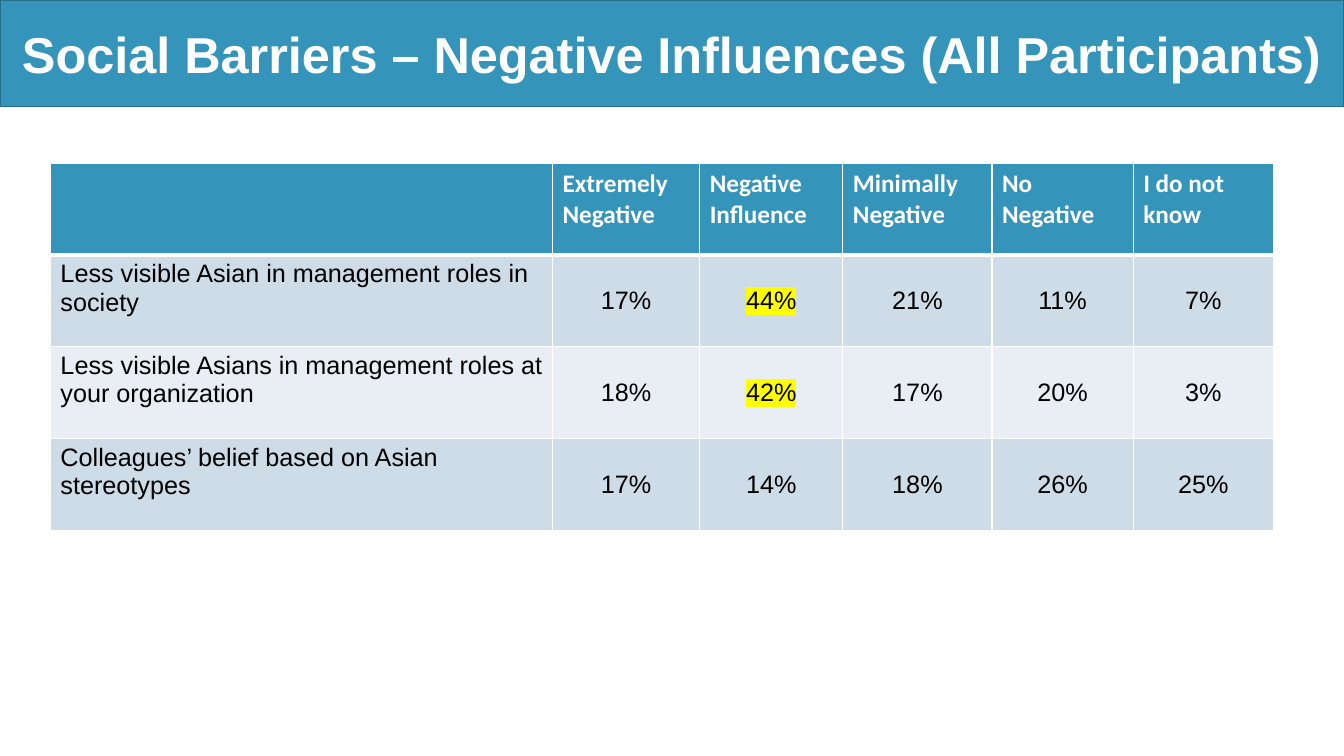
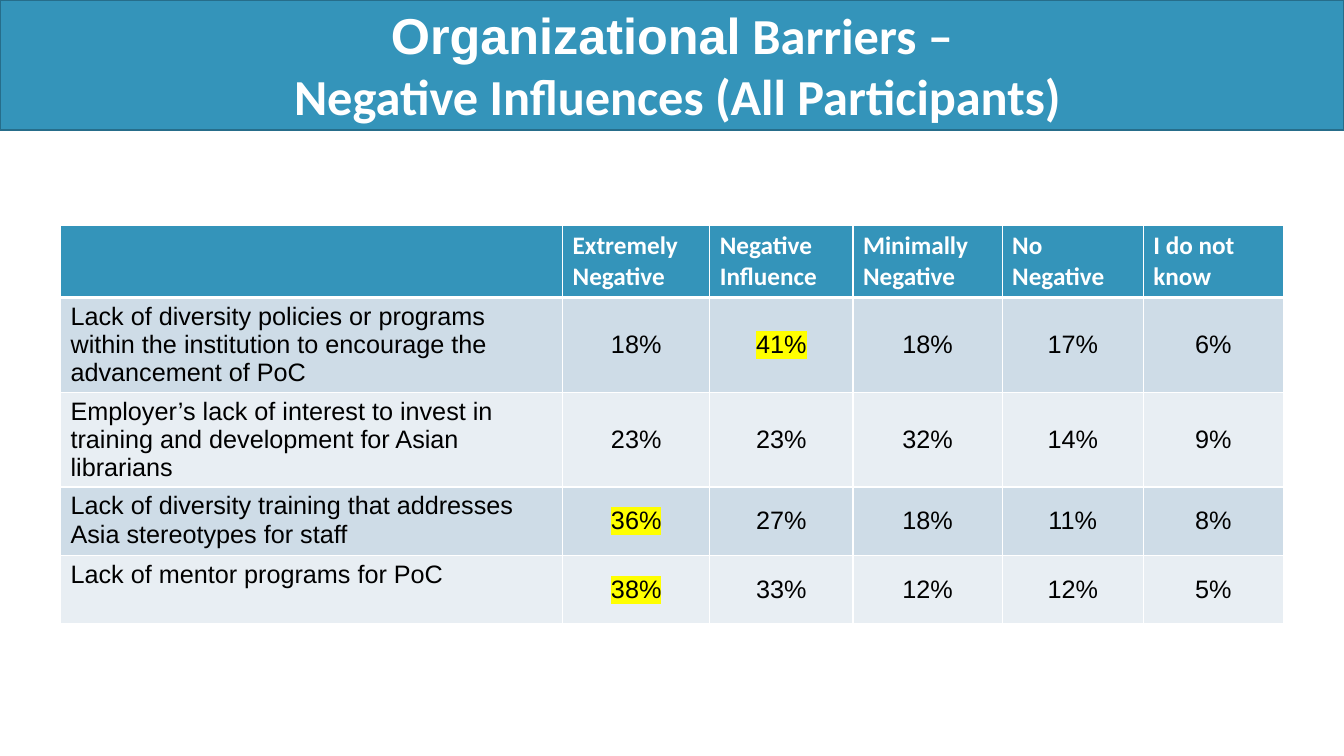
from lxml import etree
from pptx import Presentation
from pptx import util as u
from pptx.dml.color import RGBColor
from pptx.enum import text
from pptx.oxml import ns

TEAL = RGBColor(0x34, 0x94, 0xBA)
EDGE = RGBColor(0x26, 0x6D, 0x8A)
WHITE = RGBColor(0xFF, 0xFF, 0xFF)
BLACK = RGBColor(0, 0, 0)
MARK = RGBColor(0xFF, 0xFF, 0)
BANDS = (RGBColor(0xCE, 0xDC, 0xE7), RGBColor(0xE8, 0xEE, 0xF3))

TITLE = dict(name="Arial", size=u.Pt(36), bold=True, color=WHITE)
HEAD = dict(name="Calibri", size=u.Pt(18), bold=True, color=WHITE)
BODY = dict(name="Arial", size=u.Pt(18), bold=False, color=BLACK)

LABELS = ("", "Extremely Negative", "Negative Influence",
          "Minimally\nNegative", "No Negative", "I do not know")
WIDTHS = (4.98, 1.46, 1.42, 1.48, 1.4, 1.39)

SOCIAL = (
    ("Less visible Asian in management roles in society",
     (17, 44, 21, 11, 7), 44),
    ("Less visible Asians in management roles at your organization",
     (18, 42, 17, 20, 3), 42),
    ("Colleagues’ belief based on Asian stereotypes",
     (17, 14, 18, 26, 25), None),
)
WORK = (
    ("Lack of diversity policies or programs within the institution "
     "to encourage the advancement of PoC",
     (18, 41, 18, 17, 6), 41),
    ("Employer’s lack of interest to invest in training and development "
     "for Asian librarians",
     (23, 23, 32, 14, 9), None),
    ("Lack of diversity training that addresses Asia stereotypes for staff",
     (36, 27, 18, 11, 8), 36),
    ("Lack of mentor programs for PoC",
     (38, 33, 12, 12, 5), 38),
)


class Deck:
    def __init__(self):
        self.prs = Presentation()
        self.prs.slide_width = u.Inches(13.33)
        self.prs.slide_height = u.Inches(7.5)
        self.slide = None

    def style(self, run, form):
        for key, value in form.items():
            if key == "color":
                run.font.color.rgb = value
            else:
                setattr(run.font, key, value)

    def page(self, height, lines):
        self.slide = self.prs.slides.add_slide(self.prs.slide_layouts[5])
        band = self.slide.shapes.title
        place = dict(left=0, top=0, width=13.33, height=height)
        for key, value in place.items():
            setattr(band, key, u.Inches(value))
        band.fill.solid()
        band.fill.fore_color.rgb = TEAL
        band.line.color.rgb = EDGE
        band.line.width = u.Pt(0.85)
        frame = band.text_frame
        form = dict(word_wrap=True, auto_size=text.MSO_AUTO_SIZE.NONE,
                    vertical_anchor=text.MSO_ANCHOR.MIDDLE)
        for key, value in form.items():
            setattr(frame, key, value)
        for num, line in enumerate(lines):
            para = frame.add_paragraph() if num else frame.paragraphs[0]
            para.alignment = text.PP_ALIGN.CENTER
            for words, font in line:
                run = para.add_run()
                run.text = words
                self.style(run, {**TITLE, "name": font})

    def edges(self, cell, top, bottom):
        props = cell._tc.get_or_add_tcPr()
        for side, width in zip("LRTB", (1, 1, top, bottom)):
            line = etree.SubElement(props, ns.qn(f"a:ln{side}"), w=str(u.Pt(width)))
            fill = etree.SubElement(line, ns.qn("a:solidFill"))
            etree.SubElement(fill, ns.qn("a:srgbClr"), val=str(WHITE))

    def cell(self, cell, words, form, fill, top=1, bottom=1):
        self.edges(cell, top, bottom)
        cell.fill.solid()
        cell.fill.fore_color.rgb = fill
        cell.text = words
        for para in cell.text_frame.paragraphs:
            for run in para.runs:
                self.style(run, form)

    def value(self, cell, marked):
        cell.vertical_anchor = text.MSO_ANCHOR.MIDDLE
        para = cell.text_frame.paragraphs[0]
        para.alignment = text.PP_ALIGN.CENTER
        if marked:
            props = para.runs[0].font._element
            light = etree.Element(ns.qn("a:highlight"))
            etree.SubElement(light, ns.qn("a:srgbClr"), val=str(MARK))
            props.find(ns.qn("a:solidFill")).addnext(light)

    def table(self, left, top, height, data):
        count = len(data) + 1
        box = (left, top, sum(WIDTHS), height * count)
        grid = self.slide.shapes.add_table(
            count, len(WIDTHS), *map(u.Inches, box)).table
        for col, width in zip(grid.columns, WIDTHS):
            col.width = u.Inches(width)
        for row in grid.rows:
            row.height = u.Inches(height)
        for col, label in enumerate(LABELS):
            self.cell(grid.cell(0, col), label, HEAD, TEAL, bottom=3)
        for row, (label, values, peak) in enumerate(data, 1):
            fill = BANDS[(row - 1) % 2]
            top = 3 if row == 1 else 1
            self.cell(grid.cell(row, 0), label, BODY, fill, top)
            for col, value in enumerate(values, 1):
                cell = grid.cell(row, col)
                self.cell(cell, f"{value}%", BODY, fill, top)
                self.value(cell, value == peak)


def main():
    deck = Deck()
    deck.page(1.06, [
        [("Social Barriers – Negative Influences (All Participants)", "Arial")]])
    deck.table(0.5, 1.62, 0.91, SOCIAL)
    deck.page(1.29, [
        [("Organizational", "Arial"), (" Barriers –", "Calibri")],
        [(" Negative Influences (All Participants)", "Calibri")]])
    deck.table(0.6, 2.24, 0.68, WORK)
    deck.prs.save("out.pptx")


if __name__ == "__main__":
    main()
